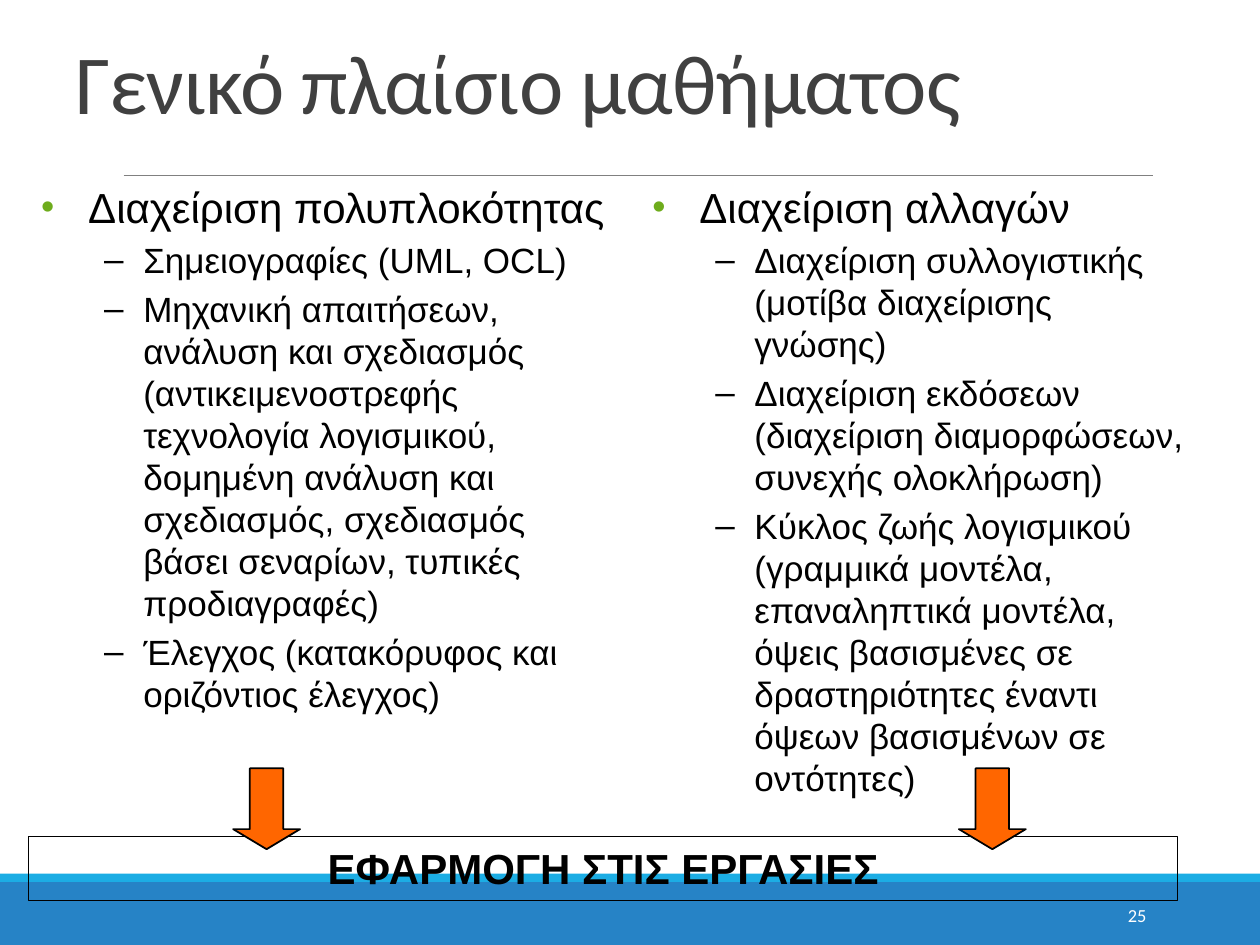
from lxml.etree import SubElement
from pptx import Presentation
from pptx.dml.color import RGBColor
from pptx.enum.shapes import MSO_CONNECTOR, MSO_SHAPE
from pptx.enum.text import MSO_ANCHOR, PP_ALIGN
from pptx.oxml.ns import qn
from pptx.util import Cm, Pt

BLUE = RGBColor(0x26, 0x83, 0xC6)
CYAN = RGBColor(0x1C, 0xAD, 0xE4)
GREEN = RGBColor(0x6E, 0xAC, 0x1C)
ORANGE = RGBColor(0xFF, 0x66, 0x00)
GREY = RGBColor(0x80, 0x80, 0x80)
DARK = RGBColor(0x40, 0x40, 0x40)
BLACK = RGBColor(0, 0, 0)
WHITE = RGBColor(0xFF, 0xFF, 0xFF)

COMPLEXITY = ("Διαχείριση πολυπλοκότητας", [
    "Σημειογραφίες (UML, OCL)",
    "Μηχανική απαιτήσεων, ανάλυση και σχεδιασμός (αντικειμενοστρεφής "
    "τεχνολογία λογισμικού, δομημένη ανάλυση και σχεδιασμός, σχεδιασμός "
    "βάσει σεναρίων, τυπικές προδιαγραφές)",
    "Έλεγχος (κατακόρυφος και οριζόντιος έλεγχος)",
])
CHANGE = ("Διαχείριση αλλαγών", [
    "Διαχείριση συλλογιστικής (μοτίβα διαχείρισης γνώσης)",
    "Διαχείριση εκδόσεων (διαχείριση διαμορφώσεων, συνεχής ολοκλήρωση)",
    "Κύκλος ζωής λογισμικού (γραμμικά μοντέλα, επαναληπτικά μοντέλα, "
    "όψεις βασισμένες σε δραστηριότητες έναντι όψεων βασισμένων σε "
    "οντότητες)",
])


def add_block(slide, kind, box, fill=None, line=None, width=0.75):
    sp = slide.shapes.add_shape(kind, *map(Cm, box))
    sp.shadow.inherit = False
    if fill is None:
        sp.fill.background()
    else:
        sp.fill.solid()
        sp.fill.fore_color.rgb = fill
    if line is None:
        sp.line.fill.background()
    else:
        sp.line.color.rgb = line
        sp.line.width = Pt(width)
    return sp


def add_text_frame(slide, box, anchor=MSO_ANCHOR.TOP):
    tf = slide.shapes.add_textbox(*map(Cm, box)).text_frame
    tf.word_wrap = True
    tf.vertical_anchor = anchor
    return tf


def write(p, text, color=BLACK, **fmt):
    r = p.add_run()
    r.text = text
    r.font.color.rgb = color
    for name, value in fmt.items():
        setattr(r.font, name, value)
    return r


def set_bullet(p, char, left, hanging, color=None, percent=None):
    pPr = p._p.get_or_add_pPr()
    pPr.set("marL", str(Cm(left)))
    pPr.set("indent", str(-Cm(hanging)))
    if color is not None:
        buClr = SubElement(pPr, qn("a:buClr"))
        SubElement(buClr, qn("a:srgbClr"), val=str(color))
    if percent:
        SubElement(pPr, qn("a:buSzPct"), val=str(percent * 1000))
    SubElement(pPr, qn("a:buFont"), typeface="Arial")
    SubElement(pPr, qn("a:buChar"), char=char)


def add_title(slide, box, text):
    p = add_text_frame(slide, box, MSO_ANCHOR.BOTTOM).paragraphs[0]
    p.line_spacing = 0.85
    r = write(p, text, DARK, name="Calibri", size=Pt(48))
    r.font._element.set("spc", "-50")


def add_rule(slide, left, top, width):
    line = slide.shapes.add_connector(
        MSO_CONNECTOR.STRAIGHT, Cm(left), Cm(top), Cm(left + width), Cm(top))
    line.line.color.rgb = GREY
    line.line.width = Pt(0.5)
    SubElement(line._element.spPr, qn("a:effectLst"))


def add_footer(slide, box, number):
    left, top, width, height = box
    stripe = 0.17
    add_block(slide, MSO_SHAPE.RECTANGLE,
              (left, top + stripe, width, height - stripe), BLUE)
    add_block(slide, MSO_SHAPE.RECTANGLE, (left, top, width, stripe), CYAN)
    # Slide number
    tf = add_text_frame(slide, (left + 20.62, top + 0.33, 2.74, 1.02),
                        MSO_ANCHOR.MIDDLE)
    p = tf.paragraphs[0]
    p.alignment = PP_ALIGN.RIGHT
    write(p, number, WHITE, name="Calibri", size=Pt(10.5))


def add_topic(slide, box, heading, items):
    tf = add_text_frame(slide, box)
    p = tf.paragraphs[0]
    p.space_before = Pt(4.8)
    set_bullet(p, "•", 0.95, 0.95, GREEN, 90)
    write(p, heading, name="Arial", size=Pt(24))
    for item in items:
        p = tf.add_paragraph()
        p.level = 1
        p.space_before = Pt(4)
        set_bullet(p, "–", 2.06, 0.79)
        write(p, item, name="Arial", size=Pt(20))


def add_conclusion(slide, box, text, arrow_offsets):
    left, top, _, _ = box
    sp = add_block(slide, MSO_SHAPE.RECTANGLE, box, line=BLACK)
    tf = sp.text_frame
    tf.word_wrap = True
    tf.vertical_anchor = MSO_ANCHOR.TOP
    p = tf.paragraphs[0]
    p.alignment = PP_ALIGN.CENTER
    p.space_before = Pt(12)
    write(p, text, name="Arial", size=Pt(24), bold=True)
    # Arrows pointing into the box
    for offset in arrow_offsets:
        arrow = add_block(slide, MSO_SHAPE.DOWN_ARROW,
                          (left + offset, top - 1.37, 1.35, 1.63),
                          ORANGE, BLACK, 1)
        arrow.adjustments[0] = 0.5
        arrow.adjustments[1] = 0.3


def main():
    prs = Presentation()
    prs.slide_width, prs.slide_height = Cm(25.4), Cm(19.05)
    slide = prs.slides.add_slide(prs.slide_layouts[6])

    add_footer(slide, (0, 17.61, 25.4, 1.44), "25")
    add_rule(slide, 2.49, 3.53, 20.75)
    add_title(slide, (1.27, 0.76, 22.86, 2.01), "Γενικό πλαίσιο μαθήματος")
    add_topic(slide, (0.58, 3.53, 11.91, 12.57), *COMPLEXITY)
    add_topic(slide, (12.9, 3.53, 11.23, 12.57), *CHANGE)
    add_conclusion(slide, (0.58, 16.86, 23.16, 1.3),
                   "ΕΦΑΡΜΟΓΗ ΣΤΙΣ ΕΡΓΑΣΙΕΣ", (4.12, 18.75))
    prs.save("out.pptx")


if __name__ == "__main__":
    main()
